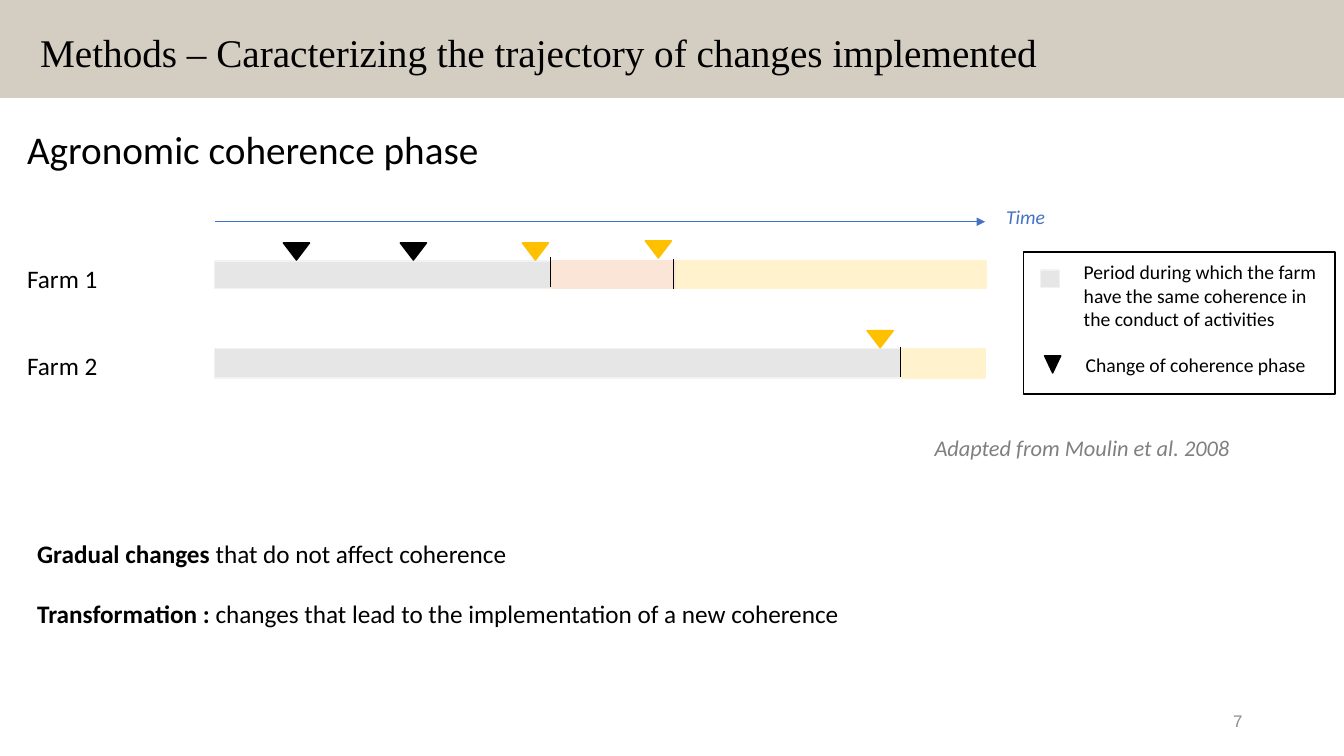
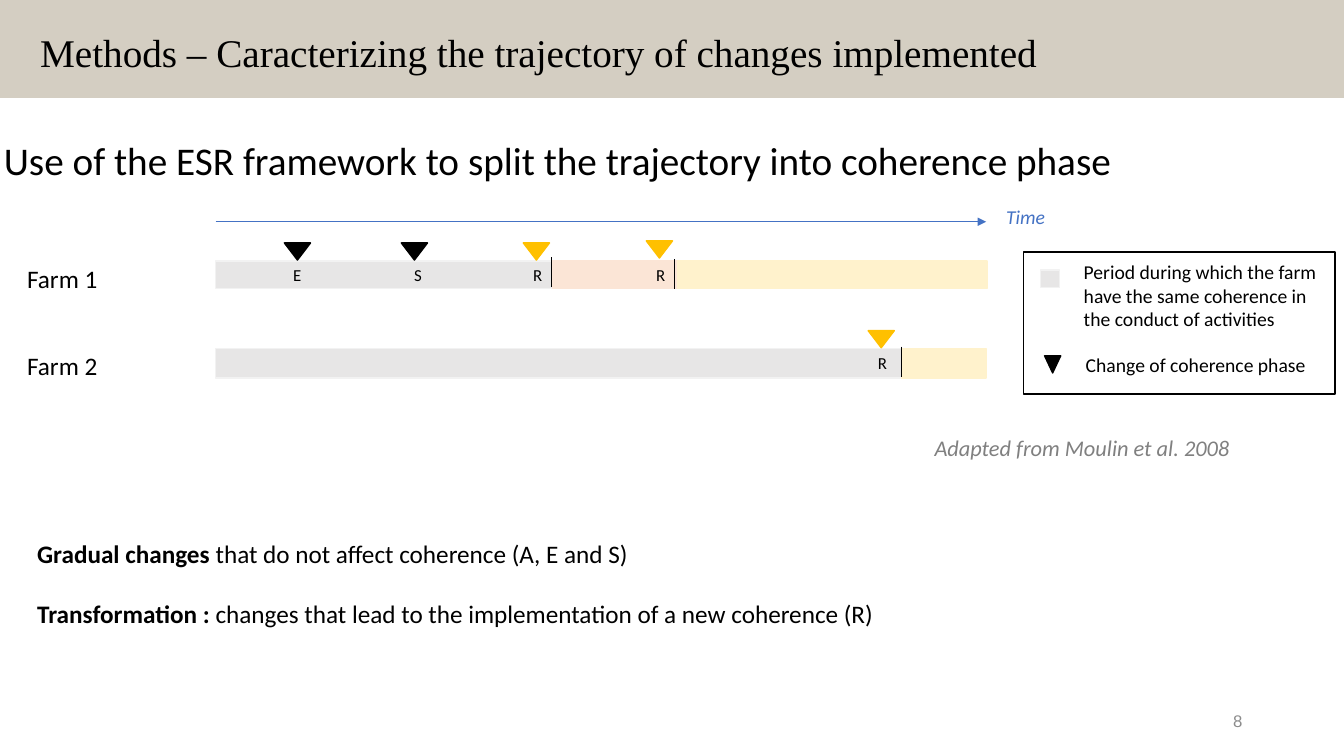
from pptx import Presentation
from pptx.dml.color import RGBColor
from pptx.enum import shapes, text
from pptx.oxml import parse_xml
from pptx.oxml.ns import nsdecls, qn
from pptx.util import Inches, Pt

BLACK = RGBColor(0x00, 0x00, 0x00)
BLUE = RGBColor(0x44, 0x72, 0xC4)
GOLD = RGBColor(0xFF, 0xC0, 0x00)
GRAY = RGBColor(0xE7, 0xE6, 0xE6)
EDGE = RGBColor(0xF2, 0xF2, 0xF2)
PEACH = RGBColor(0xFB, 0xE5, 0xD6)
CREAM = RGBColor(0xFF, 0xF2, 0xCC)
SAND = RGBColor(0xD4, 0xCE, 0xC2)
DIM = RGBColor(0x80, 0x80, 0x80)
PALE = RGBColor(0x8C, 0x8C, 0x8C)

TITLE = "Methods – Caracterizing the trajectory of changes implemented"
SOURCE = "Adapted from Moulin et al. 2008"
PERIOD = "Period during which the farm have the same coherence in the conduct of activities"
CHANGE = "Change of coherence phase"

# phases: left, width, fill, edge; marks: left, lift, colour, letter, letter left
FARMS = [
    {"name": "Farm 1", "top": 2.59, "high": 0.27,
     "phases": [(2.13, 3.34, GRAY, EDGE), (5.47, 1.24, PEACH, PEACH),
                (6.71, 3.07, CREAM, CREAM)],
     "marks": [(2.81, 0.18, BLACK, "E", 2.8), (3.97, 0.18, BLACK, "S", 4),
               (5.18, 0.18, GOLD, "R", 5.18), (6.4, 0.2, GOLD, "R", 6.4)],
     "ticks": [(5.46, 0.04), (6.68, 0.02)]},
    {"name": "Farm 2", "top": 3.46, "high": 0.29,
     "phases": [(2.13, 6.82, GRAY, EDGE), (8.93, 0.84, CREAM, CREAM)],
     "marks": [(8.6, 0.18, GOLD, "R", 8.6)],
     "ticks": [(8.93, 0.02)]},
]
PAGES = [
    {"num": "7", "head": "Agronomic coherence phase", "at": (0.17, 1.19),
     "shift": 0, "letters": False, "ends": ("", "")},
    {"num": "8", "at": (-0.06, 1.3),
     "head": "Use of the ESR framework to split the trajectory into coherence phase",
     "shift": 0.01, "letters": True, "ends": (" (A, E and S)", " (R)")},
]
NOTES = [("Gradual changes ", "that do not affect coherence"),
         ("Transformation :", " changes that lead to the implementation of a new coherence")]


def write(slide, paras, x, y, w, h, size=18, font="Calibri", color=BLACK,
          italic=False, align=text.PP_ALIGN.LEFT, anchor=text.MSO_ANCHOR.TOP, gap=0):
    """Each paragraph is a string or a (bold, plain) pair."""
    frame = slide.shapes.add_textbox(Inches(x), Inches(y), Inches(w), Inches(h)).text_frame
    frame.word_wrap = True
    frame.vertical_anchor = anchor
    for i, item in enumerate([paras] if isinstance(paras, str) else paras):
        para = frame.add_paragraph() if i else frame.paragraphs[0]
        para.alignment = align
        para.space_before = Pt(gap if i else 0)
        parts = [(item, False)] if isinstance(item, str) else zip(item, (True, False))
        for words, bold in parts:
            run = para.add_run()
            run.text = words
            run.font.size, run.font.name = Pt(size), font
            run.font.bold, run.font.italic = bold, italic
            run.font.color.rgb = color


def block(slide, x, y, w, h, fill=None, edge=None, kind=shapes.MSO_SHAPE.RECTANGLE):
    shape = slide.shapes.add_shape(kind, Inches(x), Inches(y), Inches(w), Inches(h))
    shape.shadow.inherit = False
    if fill is None:
        shape.fill.background()
    else:
        shape.fill.solid()
        shape.fill.fore_color.rgb = fill
    if edge is None:
        shape.line.fill.background()
    else:
        shape.line.color.rgb = edge
        shape.line.width = Pt(1)
    return shape


def wedge(slide, x, y, color, w=0.26):
    mark = block(slide, x, y, w, 0.17, color, color, shapes.MSO_SHAPE.ISOSCELES_TRIANGLE)
    mark.rotation = 180


def rule(slide, x1, y1, x2, y2, color=BLACK, arrow=False):
    line = slide.shapes.add_connector(shapes.MSO_CONNECTOR.STRAIGHT, Inches(x1),
                                      Inches(y1), Inches(x2), Inches(y2))
    line.line.color.rgb = color
    line.line.width = Pt(0.5)
    props = line._element.spPr
    if arrow:
        props.find(qn("a:ln")).append(
            parse_xml(f'<a:tailEnd {nsdecls("a")} type="triangle"/>'))
    props.append(parse_xml(f'<a:effectLst {nsdecls("a")}/>'))


def frame(slide, num):
    block(slide, 0, 0, 13.33, 0.97, SAND, kind=shapes.MSO_SHAPE.FLOWCHART_PROCESS)
    write(slide, TITLE, 0.3, 0.23, 11.92, 0.57, size=28, font="Times New Roman")
    write(slide, num, 9.42, 6.95, 3, 0.4, size=12, font="Arial", color=PALE,
          align=text.PP_ALIGN.RIGHT, anchor=text.MSO_ANCHOR.MIDDLE)


def lane(slide, farm, shift, letters):
    top, high = farm["top"], farm["high"]
    write(slide, farm["name"], 0.17, top - 0.03, 2.34, 0.4)
    for x, w, fill, edge in farm["phases"]:
        block(slide, x + shift, top, w, high, fill, edge)
    for x, lift, color, letter, left in farm["marks"]:
        wedge(slide, x + shift, top - lift, color)
        if letters:
            write(slide, letter, left + shift, top - 0.01, 0.46, 0.3, size=12)
    for x, lift in farm["ticks"]:
        rule(slide, x + shift, top - lift, x + shift, top - lift + 0.3)


def legend(slide):
    block(slide, 10.15, 2.5, 3.09, 1.41, edge=BLACK)
    block(slide, 10.32, 2.68, 0.19, 0.17, GRAY, EDGE)
    write(slide, PERIOD, 10.65, 2.53, 2.68, 0.81, size=14)
    wedge(slide, 10.36, 3.53, BLACK, w=0.16)
    write(slide, CHANGE, 10.67, 3.45, 2.83, 0.34, size=14)


def main():
    deck = Presentation()
    deck.slide_width, deck.slide_height = Inches(13.33), Inches(7.5)
    for page in PAGES:
        slide = deck.slides.add_slide(deck.slide_layouts[6])
        shift = page["shift"]
        frame(slide, page["num"])
        write(slide, page["head"], *page["at"], 13.78, 0.57, size=28)
        rule(slide, 2.13 + shift, 2.2, 9.77 + shift, 2.2, color=BLUE, arrow=True)
        write(slide, "Time", 9.88, 1.98, 2.32, 0.34, size=14, color=BLUE, italic=True)
        for farm in FARMS:
            lane(slide, farm, shift, page["letters"])
        legend(slide)
        write(slide, SOURCE, 9.17, 4.26, 3.72, 0.37, size=16, color=DIM, italic=True)
        notes = [(bold, rest + end) for (bold, rest), end in zip(NOTES, page["ends"])]
        write(slide, notes, 0.27, 5.29, 12.25, 1.01, gap=21)
    deck.save("out.pptx")


if __name__ == "__main__":
    main()
